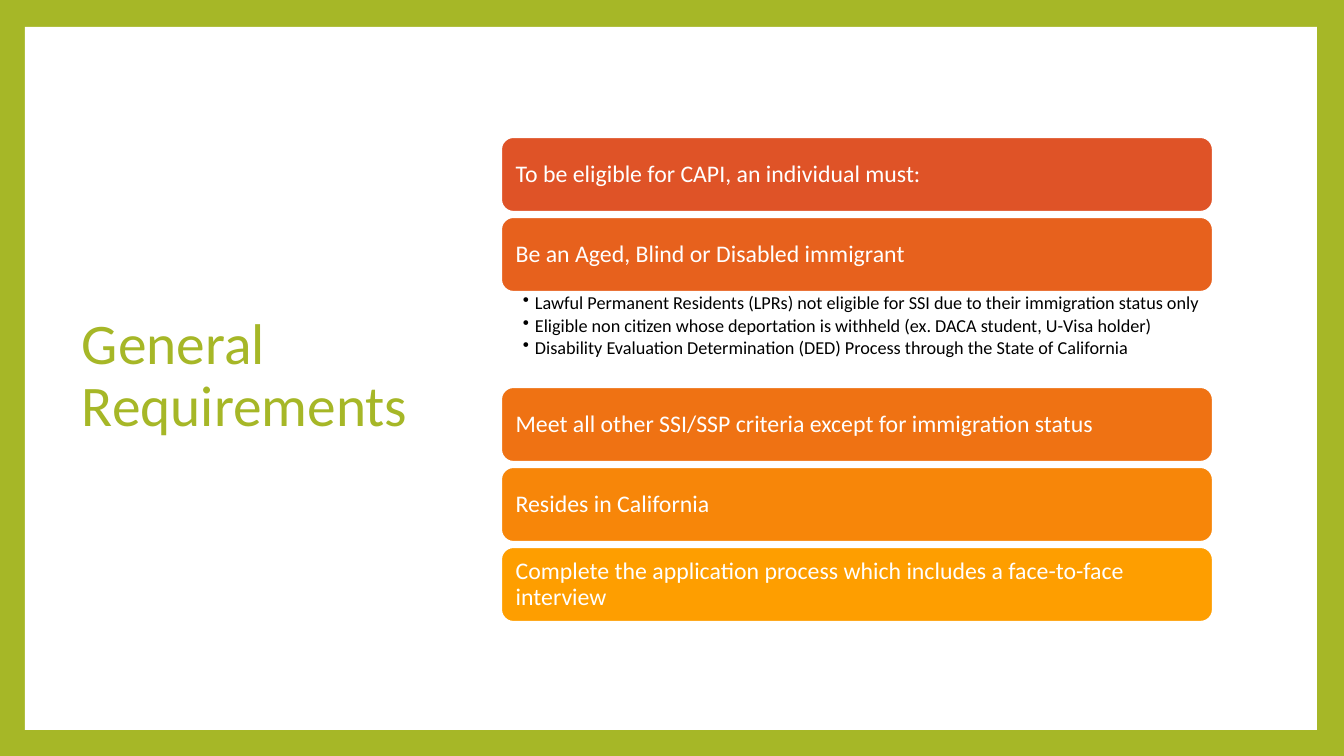
import dataclasses

import lxml.etree
import pptx
import pptx.dml.color
import pptx.enum.shapes
import pptx.enum.text
import pptx.oxml.ns
import pptx.util

SHAPE = pptx.enum.shapes.MSO_SHAPE
ANCHOR = pptx.enum.text.MSO_ANCHOR
AUTO_SIZE = pptx.enum.text.MSO_AUTO_SIZE
LEFT = pptx.enum.text.PP_ALIGN.LEFT


@dataclasses.dataclass(frozen=True)
class Theme:
    font: str = "Calibri"
    green: str = "A6B727"
    white: str = "FFFFFF"
    black: str = "000000"
    bars: tuple = ("DF5327", "E7611D", "EF7213", "F78609", "FE9E00")
    title_size: int = 41
    bar_size: int = 17
    detail_size: int = 13
    line_spacing: float = 0.9
    outline: float = 1.5


def px(length):
    return pptx.util.Emu(round(length * 914400 / 100.8))


def rgb(value):
    return pptx.dml.color.RGBColor.from_string(value)


def apply(target, formats):
    for name, value in formats.items():
        setattr(target, name, value)


class RequirementSlide:
    def __init__(self, deck, theme):
        self.theme = theme
        self.slide = deck.slides.add_slide(deck.slide_layouts[5])
        backdrop = self.slide.background.fill
        backdrop.solid()
        backdrop.fore_color.rgb = rgb(theme.green)

    def place(self, shape, box):
        apply(shape, dict(zip(("left", "top", "width", "height"), map(px, box))))

    def set_text(self, shape, lines, size, color, margins, anchor, space_after=0):
        frame = shape.text_frame
        frame.text = "\n".join(lines)
        sides = ("margin_left", "margin_top", "margin_right", "margin_bottom")
        apply(frame, dict(zip(sides, map(px, margins))))
        apply(frame, {"word_wrap": True, "auto_size": AUTO_SIZE.NONE,
                      "vertical_anchor": anchor})
        for paragraph in frame.paragraphs:
            apply(paragraph, {"alignment": LEFT,
                              "line_spacing": self.theme.line_spacing,
                              "space_before": pptx.util.Pt(0),
                              "space_after": pptx.util.Pt(space_after)})
            font = paragraph.runs[0].font
            apply(font, {"name": self.theme.font, "size": pptx.util.Pt(size)})
            font.color.rgb = rgb(color)

    def title(self, text, box):
        heading = self.slide.shapes.title
        self.place(heading, box)
        self.set_text(heading, [text], self.theme.title_size, self.theme.green,
                      (10, 5, 10, 5), ANCHOR.MIDDLE)

    def block(self, kind, box, color):
        block = self.slide.shapes.add_shape(kind, *map(px, box))
        block.shadow.inherit = False
        block.fill.solid()
        block.fill.fore_color.rgb = rgb(color)
        return block

    def panel(self, box):
        panel = self.block(SHAPE.RECTANGLE, box, self.theme.white)
        panel.line.fill.background()
        self.slide.shapes.title._element.addprevious(panel._element)

    def bar(self, text, box, color):
        bar = self.block(SHAPE.ROUNDED_RECTANGLE, box, color)
        bar.line.color.rgb = rgb(self.theme.white)
        bar.line.width = pptx.util.Pt(self.theme.outline)
        self.set_text(bar, [text], self.theme.bar_size, self.theme.white,
                      (11, 11, 11, 11), ANCHOR.MIDDLE)

    def details(self, lines, box):
        details = self.slide.shapes.add_textbox(*map(px, box))
        self.set_text(details, lines, self.theme.detail_size, self.theme.black,
                      (22, 2, 13, 2), ANCHOR.TOP, 2)
        for paragraph in details.text_frame.paragraphs:
            properties = paragraph._p.get_or_add_pPr()
            for name, value in {"lvl": "1", "marL": str(px(12)),
                                "indent": str(px(-12))}.items():
                properties.set(name, value)
            bullet = lxml.etree.SubElement(properties, pptx.oxml.ns.qn("a:buChar"))
            bullet.set("char", "•")


REQUIREMENTS = (
    ("To be eligible for CAPI, an individual must:", ()),
    ("Be an Aged, Blind or Disabled immigrant", (
        "Lawful Permanent Residents (LPRs) not eligible for SSI due to their immigration status only",
        "Eligible non citizen whose deportation is withheld (ex. DACA student, U-Visa holder)",
        "Disability Evaluation Determination (DED) Process through the State of California",
    )),
    ("Meet all other SSI/SSP criteria except for immigration status", ()),
    ("Resides in California", ()),
    ("Complete the application process which includes a face-to-face interview", ()),
)


def main():
    deck = pptx.Presentation()
    apply(deck, {"slide_width": px(1344), "slide_height": px(756)})
    theme = Theme()
    page = RequirementSlide(deck, theme)
    page.title("General Requirements", (72, 68, 371, 618))
    page.panel((25, 27, 1292, 703))

    left, top, width = 501, 137, 712
    bar_height, gap, details_height = 75, 5, 95
    for (requirement, details), color in zip(REQUIREMENTS, theme.bars):
        page.bar(requirement, (left, top, width, bar_height), color)
        top += bar_height
        if details:
            page.details(details, (left, top, width, details_height))
            top += details_height
        else:
            top += gap
    deck.save("out.pptx")


if __name__ == "__main__":
    main()
